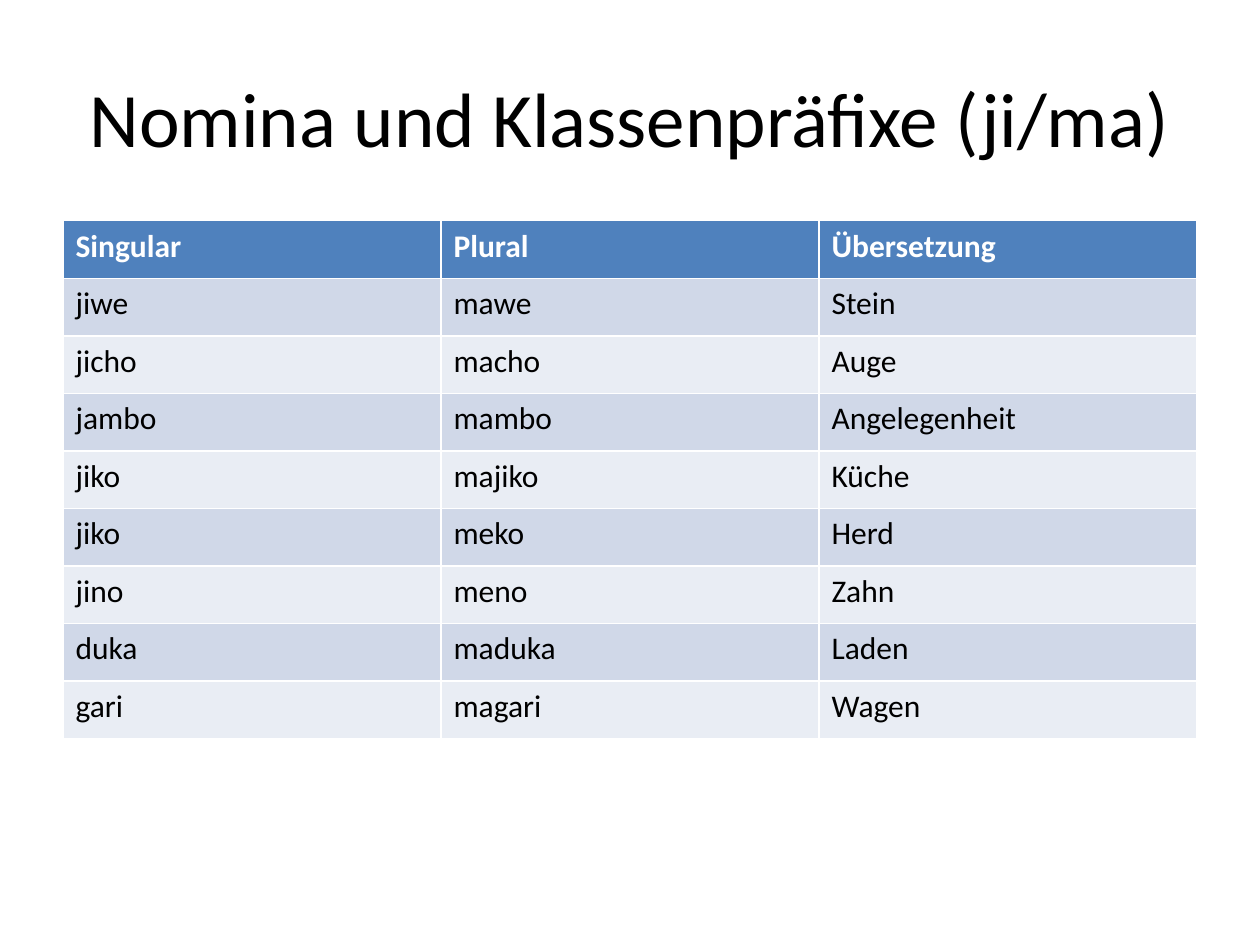
from pptx import Presentation
from pptx import util as u
from pptx.dml import color
from pptx.enum import text


def paint(target, hex_colour):
    target.fill.solid()
    target.fill.fore_color.rgb = color.RGBColor.from_string(hex_colour)


def style(paragraph, size, hex_colour, bold=False):
    paragraph.font.name = "Calibri"
    paragraph.font.size = u.Pt(size)
    paragraph.font.bold = bold
    paragraph.font.color.rgb = color.RGBColor.from_string(hex_colour)


nouns = [
    ("Singular", "Plural", "Übersetzung"),
    ("jiwe", "mawe", "Stein"),
    ("jicho", "macho", "Auge"),
    ("jambo", "mambo", "Angelegenheit"),
    ("jiko", "majiko", "Küche"),
    ("jiko", "meko", "Herd"),
    ("jino", "meno", "Zahn"),
    ("duka", "maduka", "Laden"),
    ("gari", "magari", "Wagen"),
]

deck = Presentation()
deck.slide_width, deck.slide_height = u.Cm(25.4), u.Cm(19.05)
slide = deck.slides.add_slide(deck.slide_layouts[5])
paint(slide.background, "FFFFFF")

left, width = u.Cm(1.27), u.Cm(22.86)

heading = slide.shapes.title
heading.left, heading.top = left, u.Cm(0.76)
heading.width, heading.height = width, u.Cm(3.18)
heading.text_frame.text = "Nomina und Klassenpräfixe (ji/ma)"
heading.text_frame.vertical_anchor = text.MSO_ANCHOR.MIDDLE
heading.text_frame.paragraphs[0].alignment = text.PP_ALIGN.CENTER
style(heading.text_frame.paragraphs[0], 44, "000000")

row_height = u.Cm(1.16)
noun_table = slide.shapes.add_table(
    len(nouns), len(nouns[0]), left, u.Cm(4.45), width, row_height * len(nouns)
).table

for row, forms in enumerate(nouns):
    is_header = row == 0
    band = "4F81BD" if is_header else ("E9EDF4", "D0D8E8")[row % 2]
    for column, form in enumerate(forms):
        cell = noun_table.cell(row, column)
        cell.text = form
        paint(cell, band)
        style(cell.text_frame.paragraphs[0], 18, "FFFFFF" if is_header else "000000", is_header)

deck.save("out.pptx")
